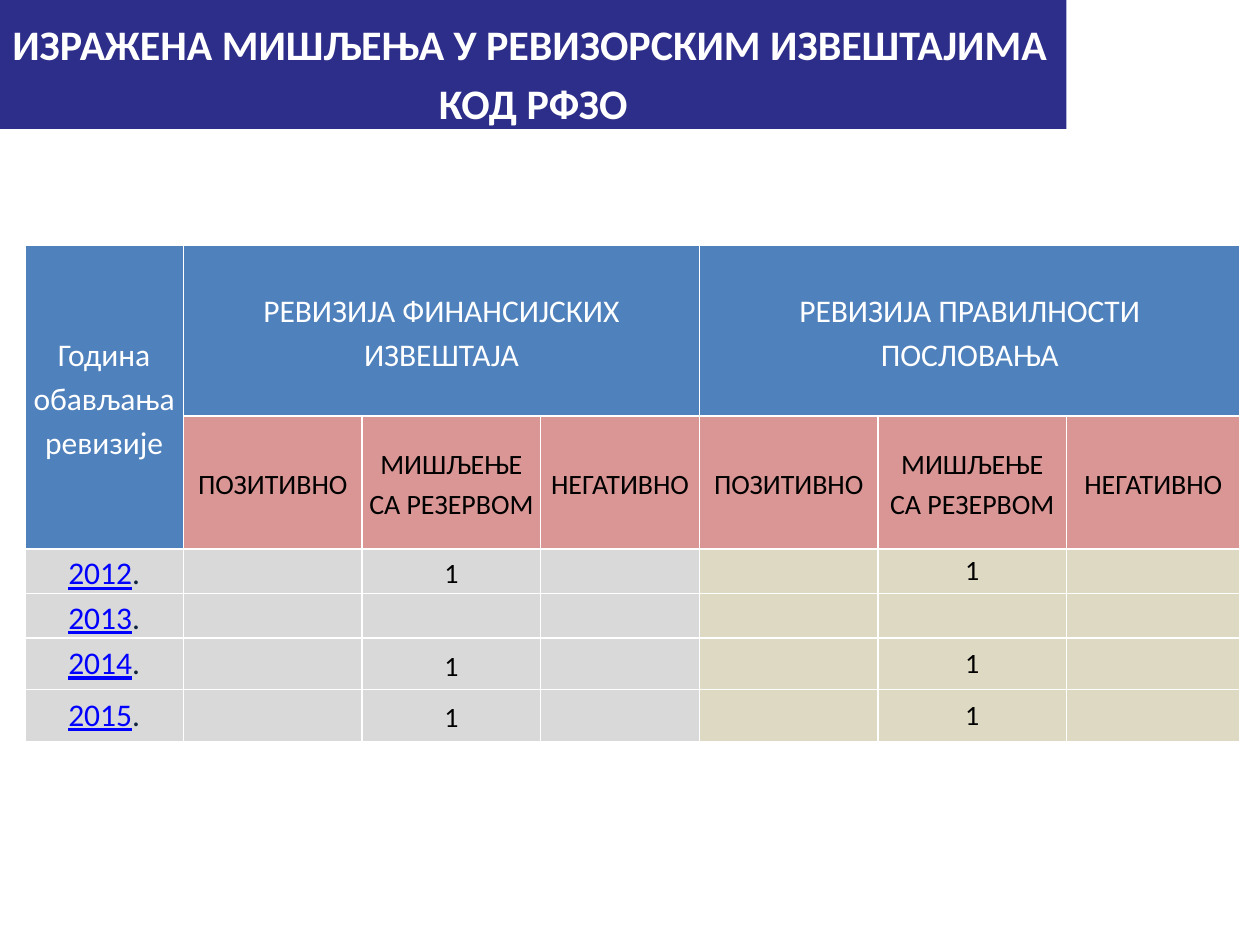
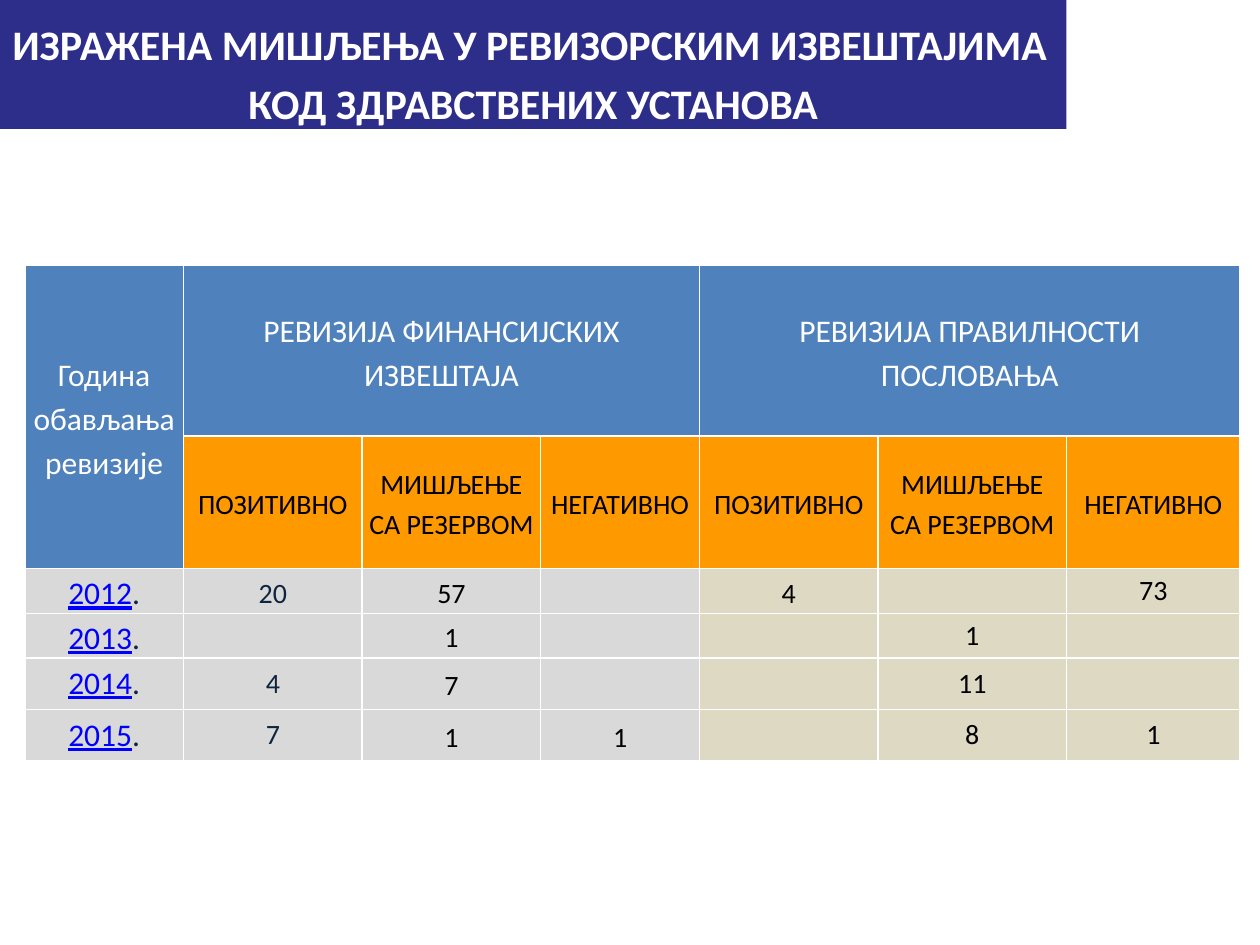
from dataclasses import dataclass
from lxml.etree import SubElement
from pptx import Presentation
from pptx.dml.color import RGBColor
from pptx.enum.shapes import MSO_SHAPE
from pptx.enum.text import MSO_ANCHOR, PP_ALIGN
from pptx.oxml.ns import qn
from pptx.util import Cm, Pt


@dataclass(frozen=True)
class Theme:
    font: str = "Calibri"
    band: str = "2D2D8A"
    white: str = "FFFFFF"
    black: str = "000000"
    header: str = "4F81BD"
    rose: str = "D99694"
    orange: str = "FF9900"
    financial: str = "D9D9D9"
    compliance: str = "DDD9C3"
    year: str = "0000FF"
    navy: str = "0F243E"
    title_size: int = 24
    large: int = 18
    small: int = 16
    border: int = 1
    spacing: float = 1.15


T = Theme()
TITLE = "ИЗРАЖЕНА МИШЉЕЊА У РЕВИЗОРСКИМ ИЗВЕШТАЈИМА"
YEAR_HEADER = "Година обављања ревизије"
AUDITS = [["РЕВИЗИЈА ФИНАНСИЈСКИХ", "ИЗВЕШТАЈА"],
          ["РЕВИЗИЈА ПРАВИЛНОСТИ", "ПОСЛОВАЊА"]]
OPINIONS = ["ПОЗИТИВНО", "МИШЉЕЊЕ СА РЕЗЕРВОМ", "НЕГАТИВНО"]
YEARS = ["2012", "2013", "2014", "2015"]
COL_WIDTHS = [3.2, 3.6, 3.6, 3.2, 3.6, 3.8, 3.5]
ROW_HEIGHTS = [3.45, 2.67, 0.9, 0.9, 1.04, 1.04]

SLIDES = [
    ("КОД РФЗО", 4.94, T.rose,
     [["", "1", "", "", "1", ""],
      ["", "", "", "", "", ""],
      ["", "1", "", "", "1", ""],
      ["", "1", "", "", "1", ""]]),
    ("КОД ЗДРАВСТВЕНИХ УСТАНОВА", 5.34, T.orange,
     [["20", "57", "", "4", "", "73"],
      ["", "1", "", "", "1", ""],
      ["4", "7", "", "", "11", ""],
      ["7", "1", "1", "", "8", "1"]]),
]


def add_run(p, text, size, color, bold=False, underline=False):
    r = p.add_run()
    r.text = text
    f = r.font
    f.name, f.size, f.bold, f.underline = T.font, Pt(size), bold, underline
    f.color.rgb = RGBColor.from_string(color)


def paragraphs(tf, count):
    return [tf.paragraphs[0]] + [tf.add_paragraph() for _ in range(count - 1)]


def add_title(s, x, y, w, h, subject):
    sp = s.shapes.add_shape(MSO_SHAPE.RECTANGLE, Cm(x), Cm(y), Cm(w), Cm(h))
    sp.shadow.inherit = False
    sp.fill.solid()
    sp.fill.fore_color.rgb = RGBColor.from_string(T.band)
    sp.line.fill.background()
    tf = sp.text_frame
    tf.word_wrap = True
    tf.vertical_anchor = MSO_ANCHOR.TOP
    tf.margin_top, tf.margin_bottom = Cm(0.38), 0
    first, second = paragraphs(tf, 2)
    first.alignment, second.alignment = PP_ALIGN.LEFT, PP_ALIGN.CENTER
    second.space_before = Pt(T.title_size * 0.2)
    add_run(first, TITLE, T.title_size, T.white, bold=True)
    add_run(second, subject, T.title_size, T.white, bold=True)


def style_cell(cell, fill):
    tcPr = cell._tc.get_or_add_tcPr()
    for side in ("lnL", "lnR", "lnT", "lnB"):
        ln = SubElement(tcPr, qn(f"a:{side}"), w=str(Pt(T.border)))
        SubElement(SubElement(ln, qn("a:solidFill")), qn("a:srgbClr"), val=T.white)
    cell.fill.solid()
    cell.fill.fore_color.rgb = RGBColor.from_string(fill)
    cell.vertical_anchor = MSO_ANCHOR.MIDDLE
    cell.margin_left = cell.margin_right = Cm(0.1)
    cell.margin_top = cell.margin_bottom = 0


def write_cell(cell, lines, size, color, spacing=T.spacing):
    for p, text in zip(paragraphs(cell.text_frame, len(lines)), lines):
        p.alignment = PP_ALIGN.CENTER
        p.line_spacing = spacing
        add_run(p, text, size, color)


def write_year(cell, year, spacing):
    p = cell.text_frame.paragraphs[0]
    p.alignment = PP_ALIGN.CENTER
    p.line_spacing = spacing
    add_run(p, year, T.large, T.year, underline=True)
    add_run(p, ".", T.large, T.navy)


def cell_fill(row, col, opinion_fill):
    if row == 0 or (row == 1 and col == 0):
        return T.header
    if row == 1:
        return opinion_fill
    return T.financial if col < 4 else T.compliance


def add_opinions(s, x, y, opinion_fill, counts):
    table = s.shapes.add_table(
        len(ROW_HEIGHTS), len(COL_WIDTHS), Cm(x), Cm(y),
        Cm(sum(COL_WIDTHS)), Cm(sum(ROW_HEIGHTS))).table
    table.first_row = table.horz_banding = False
    for column, width in zip(table.columns, COL_WIDTHS):
        column.width = Cm(width)
    for i, (row, height) in enumerate(zip(table.rows, ROW_HEIGHTS)):
        row.height = Cm(height)
        for j, cell in enumerate(row.cells):
            style_cell(cell, cell_fill(i, j, opinion_fill))

    table.cell(0, 0).merge(table.cell(1, 0))
    write_cell(table.cell(0, 0), [YEAR_HEADER], T.large, T.white)
    for col, lines in zip((1, 4), AUDITS):
        table.cell(0, col).merge(table.cell(0, col + 2))
        write_cell(table.cell(0, col), lines, T.large, T.white)
    for col, opinion in enumerate(OPINIONS * len(AUDITS), 1):
        write_cell(table.cell(1, col), [opinion], T.small, T.black)

    for row, (year, values) in enumerate(zip(YEARS, counts), 2):
        early = T.spacing if row < 4 else 1.0
        write_year(table.cell(row, 0), year, early)
        for col, value in enumerate(values, 1):
            if value:
                spacing = {1: early, 2: T.spacing, 3: T.spacing, 4: early}.get(col, 1.0)
                color = T.navy if col == 1 else T.black
                write_cell(table.cell(row, col), [value], T.small, color, spacing)


def main():
    prs = Presentation()
    prs.slide_width, prs.slide_height = Cm(25.4), Cm(19.05)
    for subject, top, opinion_fill, counts in SLIDES:
        s = prs.slides.add_slide(prs.slide_layouts[6])
        add_title(s, 0, 0, 21.5, 2.6, subject)
        add_opinions(s, 0.5, top, opinion_fill, counts)
    prs.save("out.pptx")


if __name__ == "__main__":
    main()
